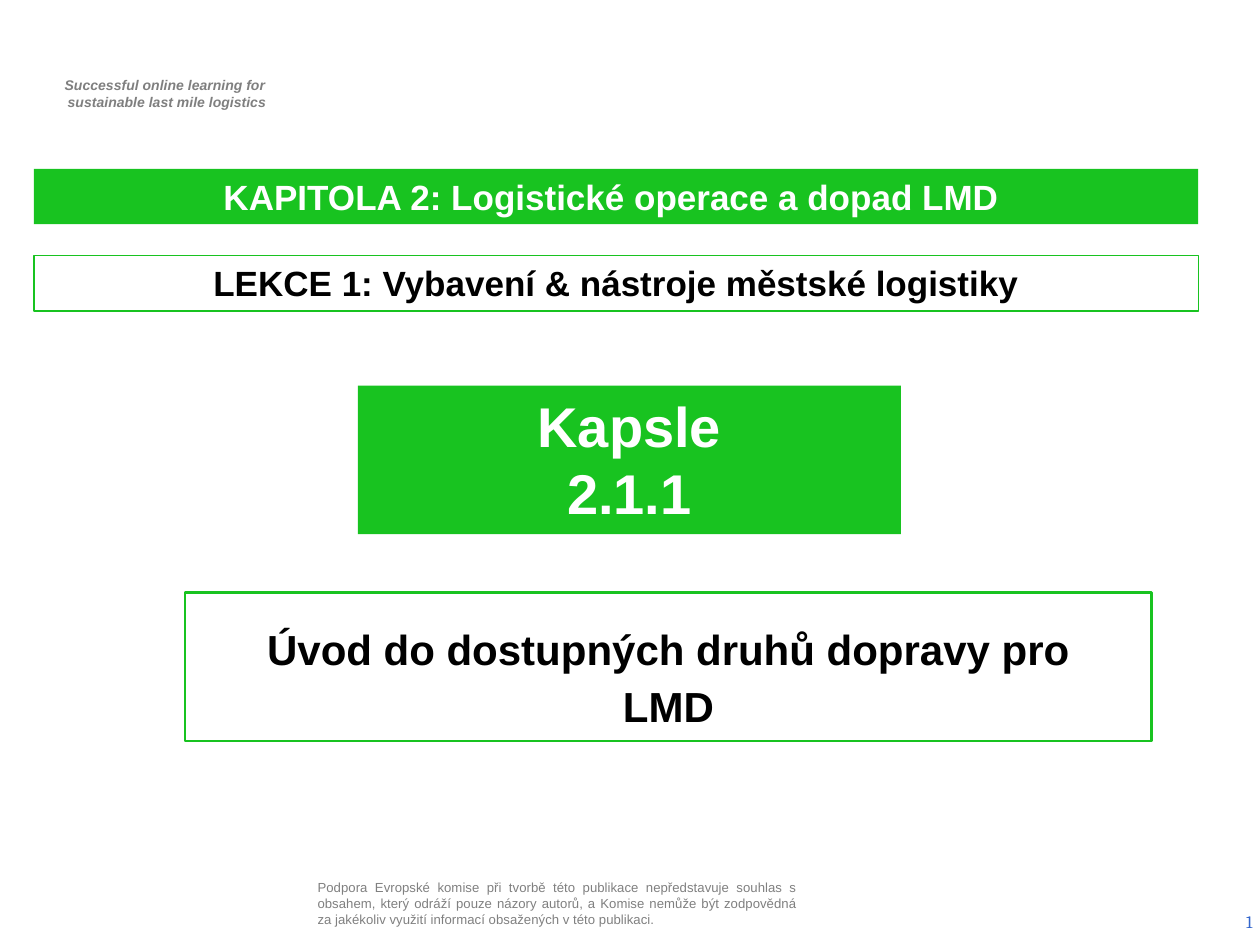
from pptx import Presentation
from pptx.dml.color import RGBColor
from pptx.enum.shapes import MSO_SHAPE
from pptx.enum.text import MSO_ANCHOR, PP_ALIGN
from pptx.util import Inches, Pt

RECT = MSO_SHAPE.RECTANGLE
TOP, MIDDLE = MSO_ANCHOR.TOP, MSO_ANCHOR.MIDDLE
CENTER, RIGHT, JUSTIFY = PP_ALIGN.CENTER, PP_ALIGN.RIGHT, PP_ALIGN.JUSTIFY
GREEN, WHITE, BLACK = "18C320", "FFFFFF", "000000"
INSETS = (0.1, 0.05, 0.1, 0.05)
TITLE = {"name": "Arial", "bold": True}
MOTTO = {"name": "Arial", "bold": True, "italic": True, "size": Pt(8)}
NOTE = {"name": "Arial", "size": Pt(7.5)}
NUMBER = {"name": "Cambria", "size": Pt(10)}


def rgb(value):
    """Turn a hex string into a colour."""
    return RGBColor.from_string(value)


def write(sp, lines, font, color, align=CENTER, anchor=TOP, insets=INSETS, after=0):
    """Write the lines as paragraphs of a shape and return its text frame."""
    tf = sp.text_frame
    tf.word_wrap = True
    tf.vertical_anchor = anchor
    for side, inset in zip(("left", "top", "right", "bottom"), insets):
        setattr(tf, f"margin_{side}", Inches(inset))
    for i, line in enumerate(lines):
        p = tf.add_paragraph() if i else tf.paragraphs[0]
        p.alignment = align
        if after and i < len(lines) - 1:
            p.space_after = Pt(after)
        r = p.add_run()
        r.text = line
        for key, value in font.items():
            setattr(r.font, key, value)
        r.font.color.rgb = rgb(color)
    return tf


def add_text(s, box, lines, font, color, **layout):
    """Add a text box in the given box."""
    sp = s.shapes.add_textbox(*map(Inches, box))
    return write(sp, lines, font, color, **layout)


def add_banner(s, box, lines, size, line_width=None, **layout):
    """Add a green banner, or an outlined one if a line width is given."""
    sp = s.shapes.add_shape(RECT, *map(Inches, box))
    sp.shadow.inherit = False
    if line_width:
        sp.fill.background()
        sp.line.color.rgb = rgb(GREEN)
        sp.line.width = Pt(line_width)
    else:
        sp.fill.solid()
        sp.fill.fore_color.rgb = rgb(GREEN)
        sp.line.fill.background()
    color = BLACK if line_width else WHITE
    write(sp, lines, {**TITLE, "size": Pt(size)}, color, **layout)


def add_frame(s, left, top, width, height):
    """Add the motto, the disclaimer and the slide number around the page."""
    add_text(s, (left + 0.29, top + 0.56, 2.03, 0.37),
             ["Successful online learning for ", "sustainable last mile logistics"],
             MOTTO, "7F7F7F", insets=(0.14, 0.05, 0.1, 0.05))
    add_text(s, (left + 2.48, top + height - 0.58, 3.88, 0.5),
             ["Podpora Evropské komise při tvorbě této publikace nepředstavuje "
              "souhlas s obsahem, který odráží pouze názory autorů, a Komise nemůže "
              "být zodpovědná za jakékoliv využití informací obsažených v této publikaci."],
             NOTE, "808080", align=JUSTIFY, anchor=MIDDLE, insets=(0.04,) * 4)
    add_text(s, (left + width - 2.29, top + height - 0.37, 2.29, 0.37), ["1"],
             NUMBER, "3366CC", align=RIGHT, anchor=MIDDLE, insets=(0.1, 0.05, 0.06, 0.05))


def add_headings(s, left, top, width, height):
    """Add the chapter and lesson banners at the two ends of the box."""
    bar = 0.44
    add_banner(s, (left, top, width, bar),
               ["KAPITOLA 2: Logistické operace a dopad LMD "], 20)
    add_banner(s, (left, top + height - bar, width, bar),
               ["LEKCE 1: Vybavení & nástroje městské logistiky"], 20, line_width=0.75)


def add_capsule(s, left, top, width, height):
    """Add the capsule number and its outlined title at the two ends of the box."""
    block = 1.18
    add_banner(s, (left + 1.37, top, 4.31, block), ["Kapsle", "2.1.1"], 32)
    add_banner(s, (left, top + height - block, width, block),
               ["Úvod do dostupných druhů dopravy pro", "LMD"], 24,
               line_width=1.5, insets=(0.1, 0.25, 0.1, 0.05), after=3.4)


def main():
    """Build the slide and save it."""
    prs = Presentation()
    prs.slide_width, prs.slide_height = Inches(10), Inches(7.5)
    s = prs.slides.add_slide(prs.slide_layouts[6])
    add_frame(s, 0, 0, 10, 7.5)
    add_headings(s, 0.27, 1.34, 9.24, 1.13)
    add_capsule(s, 1.47, 3.06, 7.67, 2.82)
    prs.save("out.pptx")


if __name__ == "__main__":
    main()
